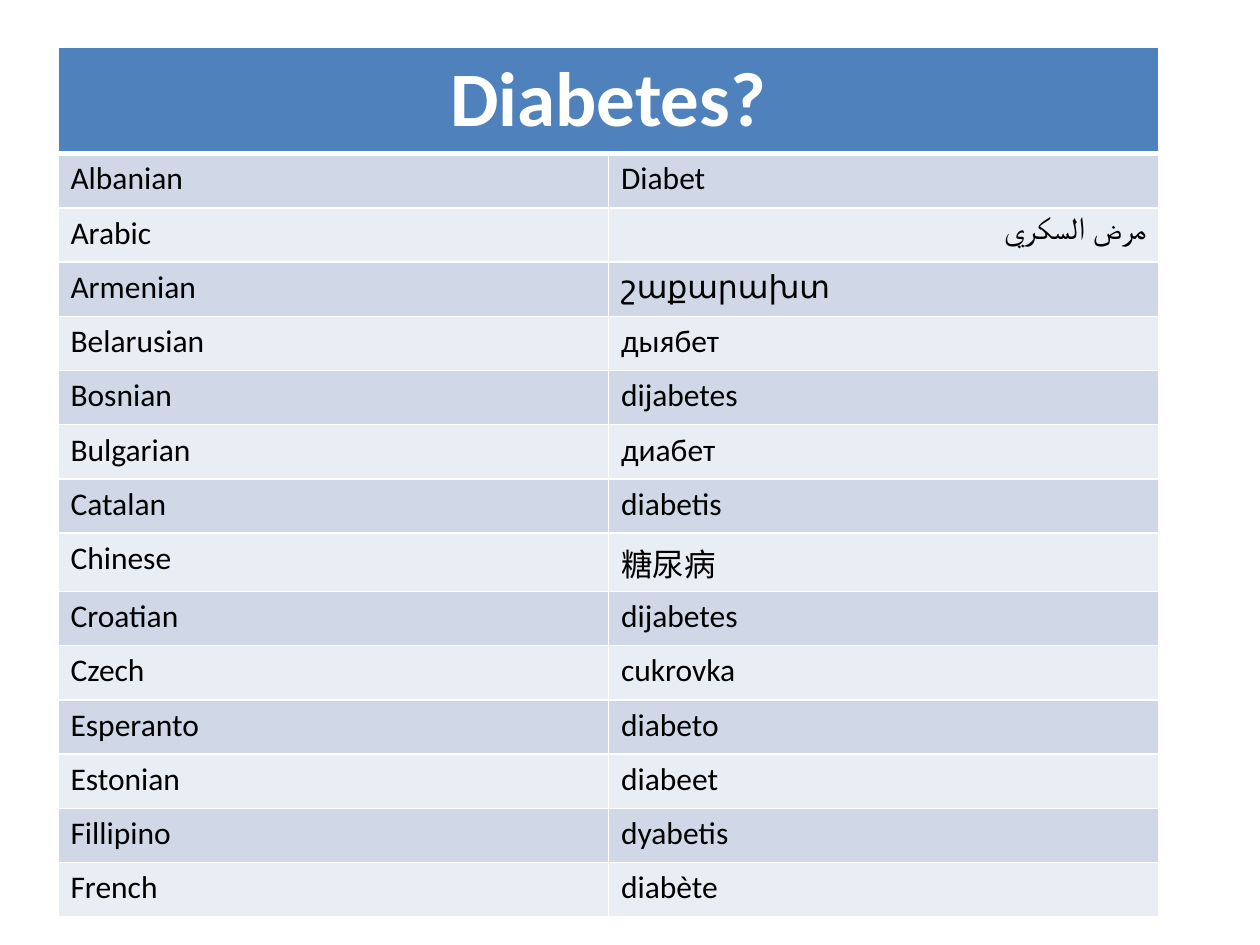
from lxml import etree
from pptx import Presentation
from pptx import util as u
from pptx.dml import color
from pptx.enum import text
from pptx.oxml import ns

COLORS = {
    "heading": "4F81BD",
    "odd_row": "D0D8E8",
    "even_row": "E9EDF4",
    "border": "FFFFFF",
    "heading_text": "FFFFFF",
    "body_text": "000000",
}
HEADING_FONT = {"name": "Calibri", "size": u.Pt(44), "bold": True}
BODY_FONT = {"name": "Calibri", "size": u.Pt(18), "bold": False}

HEADING = "Diabetes?"
TRANSLATIONS = [
    ("Albanian", "Diabet"),
    ("Arabic", "مرض السكري"),
    ("Armenian", "շաքարախտ"),
    ("Belarusian", "дыябет"),
    ("Bosnian", "dijabetes"),
    ("Bulgarian", "диабет"),
    ("Catalan", "diabetis"),
    ("Chinese", "糖尿病"),
    ("Croatian", "dijabetes"),
    ("Czech", "cukrovka"),
    ("Esperanto", "diabeto"),
    ("Estonian", "diabeet"),
    ("Fillipino", "dyabetis"),
    ("French", "diabète"),
]
LEFT, TOP = 33.1, 26.8
COLUMN_WIDTH, ROW_HEIGHT = 314.6, 31


def rgb(key):
    return color.RGBColor.from_string(COLORS[key])


def set_borders(cell, widths):
    """Draw the given cell sides; widths maps L, R, T, B to points."""
    properties = cell._tc.get_or_add_tcPr()
    for side, width in widths.items():
        line = etree.SubElement(properties, ns.qn(f"a:ln{side}"), w=str(u.Pt(width)))
        fill = etree.SubElement(line, ns.qn("a:solidFill"))
        etree.SubElement(fill, ns.qn("a:srgbClr"), val=COLORS["border"])


def fill_cell(cell, fill_key):
    cell.fill.solid()
    cell.fill.fore_color.rgb = rgb(fill_key)


def write_cell(cell, words, font_format, color_key, alignment=None):
    paragraph = cell.text_frame.paragraphs[0]
    paragraph.alignment = alignment
    run = paragraph.add_run()
    run.text = words
    for attribute, value in font_format.items():
        setattr(run.font, attribute, value)
    run.font.color.rgb = rgb(color_key)
    return paragraph


def add_heading(table):
    first, last = table.cell(0, 0), table.cell(0, 1)
    first.merge(last)
    for cell in (first, last):
        set_borders(cell, {"L": 1, "R": 1, "T": 1, "B": 3})
        fill_cell(cell, "heading")
    write_cell(first, HEADING, HEADING_FONT, "heading_text", text.PP_ALIGN.CENTER)


def add_translation(table, row, language, term):
    # The first body row shares its top edge with the thick heading border
    widths = {"L": 1, "R": 1, "T": 3 if row == 1 else 1, "B": 1}
    for column, words in enumerate((language, term)):
        cell = table.cell(row, column)
        set_borders(cell, widths)
        fill_cell(cell, "odd_row" if row % 2 else "even_row")
        right_to_left = language == "Arabic" and column == 1
        alignment = text.PP_ALIGN.RIGHT if right_to_left else None
        paragraph = write_cell(cell, words, BODY_FONT, "body_text", alignment)
        if right_to_left:
            paragraph._p.get_or_add_pPr().set("rtl", "1")


def add_glossary(slide):
    row_count = len(TRANSLATIONS) + 1
    frame = slide.shapes.add_table(
        row_count, 2, u.Pt(LEFT), u.Pt(TOP),
        u.Pt(2 * COLUMN_WIDTH), u.Pt(row_count * ROW_HEIGHT))
    glossary = frame.table
    for column in glossary.columns:
        column.width = u.Pt(COLUMN_WIDTH)
    for row in glossary.rows:
        row.height = u.Pt(ROW_HEIGHT)

    # Heading across both columns, then one row per language
    add_heading(glossary)
    for row, (language, term) in enumerate(TRANSLATIONS, start=1):
        add_translation(glossary, row, language, term)


def main():
    presentation = Presentation()
    presentation.slide_width, presentation.slide_height = u.Pt(720), u.Pt(540)
    slide = presentation.slides.add_slide(presentation.slide_layouts[6])
    add_glossary(slide)
    presentation.save("out.pptx")


if __name__ == "__main__":
    main()
